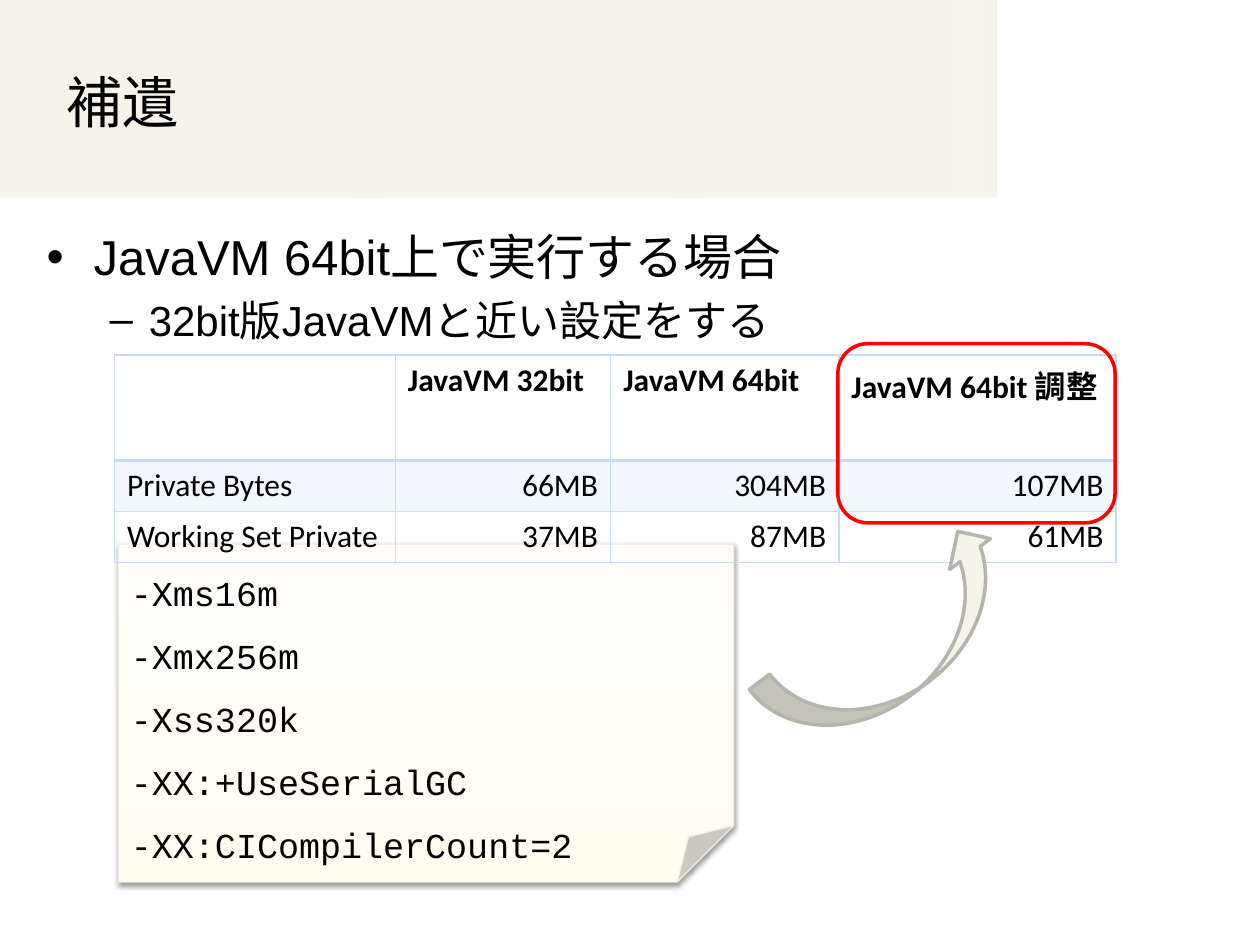
from lxml.etree import SubElement
from pptx import Presentation
from pptx.dml.color import RGBColor
from pptx.enum.shapes import MSO_SHAPE as Shape
from pptx.enum.text import MSO_ANCHOR as Anchor, PP_ALIGN as Align
from pptx.oxml.ns import qn
from pptx.util import Cm, Pt

BLACK, CREAM, GRAY, RED, BLUE = "000000", "F6F4E8", "B6B5AC", "FF0000", "C3DBFC"
COLUMN_WIDTHS = [5.66, 4.34, 4.6, 5.59]
ROW_HEIGHTS = [2.12, 1.03, 1.03]  # the header holds two lines
TABLE_ROWS = [
    ["", "JavaVM 32bit", "JavaVM 64bit", "JavaVM 64bit 調整"],
    ["Private Bytes", "66MB", "304MB", "107MB"],
    ["Working Set Private", "37MB", "87MB", "61MB"],
]
OPTIONS = ["-Xms16m", "-Xmx256m", "-Xss320k", "-XX:+UseSerialGC", "-XX:CICompilerCount=2"]


def color(value):
    return RGBColor.from_string(value)


def add_xml(parent, tag, **attributes):
    return SubElement(parent, qn(tag), {key: str(value) for key, value in attributes.items()})


def add_color(parent, value, alpha=100):
    node = add_xml(parent, "a:srgbClr", val=value)
    if alpha < 100:
        add_xml(node, "a:alpha", val=alpha * 1000)


def write(para, text, size=18, font="Arial", bold=False, align=None,
          before=0, spacing=None, bullet=None, indent=(0, 0)):
    if bullet:
        left, hang = indent
        props = para._p.get_or_add_pPr()
        props.set("marL", str(Cm(left)))
        props.set("indent", str(-Cm(hang)))
        add_xml(props, "a:buFont", typeface=font)
        add_xml(props, "a:buChar", char=bullet)
    para.alignment = align
    para.space_before = Pt(before)
    if spacing:
        para.line_spacing = spacing
    span = para.add_run()
    span.text = text
    span.font.name, span.font.size, span.font.bold = font, Pt(size), bold
    span.font.color.rgb = color(BLACK)


def add_text(page, left, top, width, height, anchor=Anchor.TOP):
    box = page.shapes.add_textbox(Cm(left), Cm(top), Cm(width), Cm(height))
    box.text_frame.word_wrap = True
    box.text_frame.vertical_anchor = anchor
    return box.text_frame


def add_shape(page, kind, left, top, width, height, fill=None, line=None, weight=2):
    shape = page.shapes.add_shape(kind, Cm(left), Cm(top), Cm(width), Cm(height))
    shape.shadow.inherit = False
    if fill:
        shape.fill.solid()
        shape.fill.fore_color.rgb = color(fill)
    else:
        shape.fill.background()
    if line:
        shape.line.color.rgb = color(line)
        shape.line.width = Pt(weight)
    else:
        shape.line.fill.background()
    return shape


def set_gradient(shape, stops, angle):
    shape.fill.gradient()
    shape.fill.gradient_angle = 0
    gradient = shape._element.spPr.find(qn("a:gradFill"))
    stop_list = gradient.find(qn("a:gsLst"))
    for old_stop in list(stop_list):
        stop_list.remove(old_stop)
    for position, value, alpha in stops:
        add_color(add_xml(stop_list, "a:gs", pos=position * 1000), value, alpha)
    gradient.find(qn("a:lin")).set("ang", str(angle * 60000))


def add_shadow(shape, blur, distance, alpha):
    effects = shape._element.spPr.find(qn("a:effectLst"))
    shadow = add_xml(effects, "a:outerShdw", blurRad=Pt(blur), dist=Pt(distance),
                     dir=90 * 60000, rotWithShape=0)
    add_color(shadow, BLACK, alpha)


def style_cell(cell, row):
    props = cell._tc.get_or_add_tcPr()
    # A heavier rule separates the header from the data
    weights = {"L": 1, "R": 1, "T": 2 if row == 1 else 1, "B": 2 if row == 0 else 1}
    for side, weight in weights.items():
        line = add_xml(props, f"a:ln{side}", w=Pt(weight))
        add_color(add_xml(line, "a:solidFill"), BLUE)
    if row == 1:
        add_color(add_xml(props, "a:solidFill"), BLUE, 20)
    else:
        cell.fill.background()


def add_memory_table(page):
    table = page.shapes.add_table(
        len(TABLE_ROWS), len(COLUMN_WIDTHS), Cm(2.31), Cm(7.16),
        Cm(sum(COLUMN_WIDTHS)), Cm(sum(ROW_HEIGHTS))).table
    table.first_row = table.horz_banding = False
    for column, width in zip(table.columns, COLUMN_WIDTHS):
        column.width = Cm(width)
    for r, (values, height) in enumerate(zip(TABLE_ROWS, ROW_HEIGHTS)):
        table.rows[r].height = Cm(height)
        for c, text in enumerate(values):
            cell = table.cell(r, c)
            style_cell(cell, r)
            if text:
                write(cell.text_frame.paragraphs[0], text, font="Calibri", bold=r == 0,
                      align=Align.RIGHT if r and c else Align.LEFT)


def add_note(page):
    note = add_shape(page, Shape.FOLDED_CORNER, 2.39, 10.97, 12.4, 6.81,
                     line="F1EFE3", weight=0.75)
    set_gradient(note, [(0, "FFFDEF", 100), (35, "FFFDF4", 100), (100, "FFFEFA", 100)], 270)
    add_shadow(note, 3.1, 1.6, 38)
    frame = note.text_frame
    frame.word_wrap = True
    frame.vertical_anchor = Anchor.TOP
    for i, option in enumerate(OPTIONS):
        para = frame.add_paragraph() if i else frame.paragraphs[0]
        write(para, option, size=20, font="Courier New", align=Align.LEFT, spacing=1.5)


def main():
    deck = Presentation()
    deck.slide_width, deck.slide_height = Cm(25.4), Cm(19.05)
    page = deck.slides.add_slide(deck.slide_layouts[6])

    # Title band
    band = add_shape(page, Shape.RECTANGLE, 0, 0, 20.09, 3.99)
    set_gradient(band, [(0, CREAM, 80), (0, CREAM, 100), (100, CREAM, 85)], 0)
    title = add_text(page, 1.09, 0.76, 19, 2.57, Anchor.MIDDLE)
    write(title.paragraphs[0], "補遺", size=32)

    # Bullets
    body = add_text(page, 0.69, 4.45, 22.86, 10.49)
    write(body.paragraphs[0], "JavaVM 64bit上で実行する場合", size=28,
          bullet="•", indent=(0.95, 0.95))
    write(body.add_paragraph(), "32bit版JavaVMと近い設定をする", size=24, before=4.8,
          bullet="–", indent=(2.06, 0.79))

    # Settings note, memory table and highlight
    add_note(page)
    add_memory_table(page)
    add_shape(page, Shape.ROUNDED_RECTANGLE, 16.89, 6.93, 5.59, 3.61, line=RED)
    arrow = add_shape(page, Shape.CURVED_UP_ARROW, 15.14, 11.94, 5.79, 2.06, CREAM, GRAY)
    arrow.rotation = 322.8

    deck.save("out.pptx")


if __name__ == "__main__":
    main()
